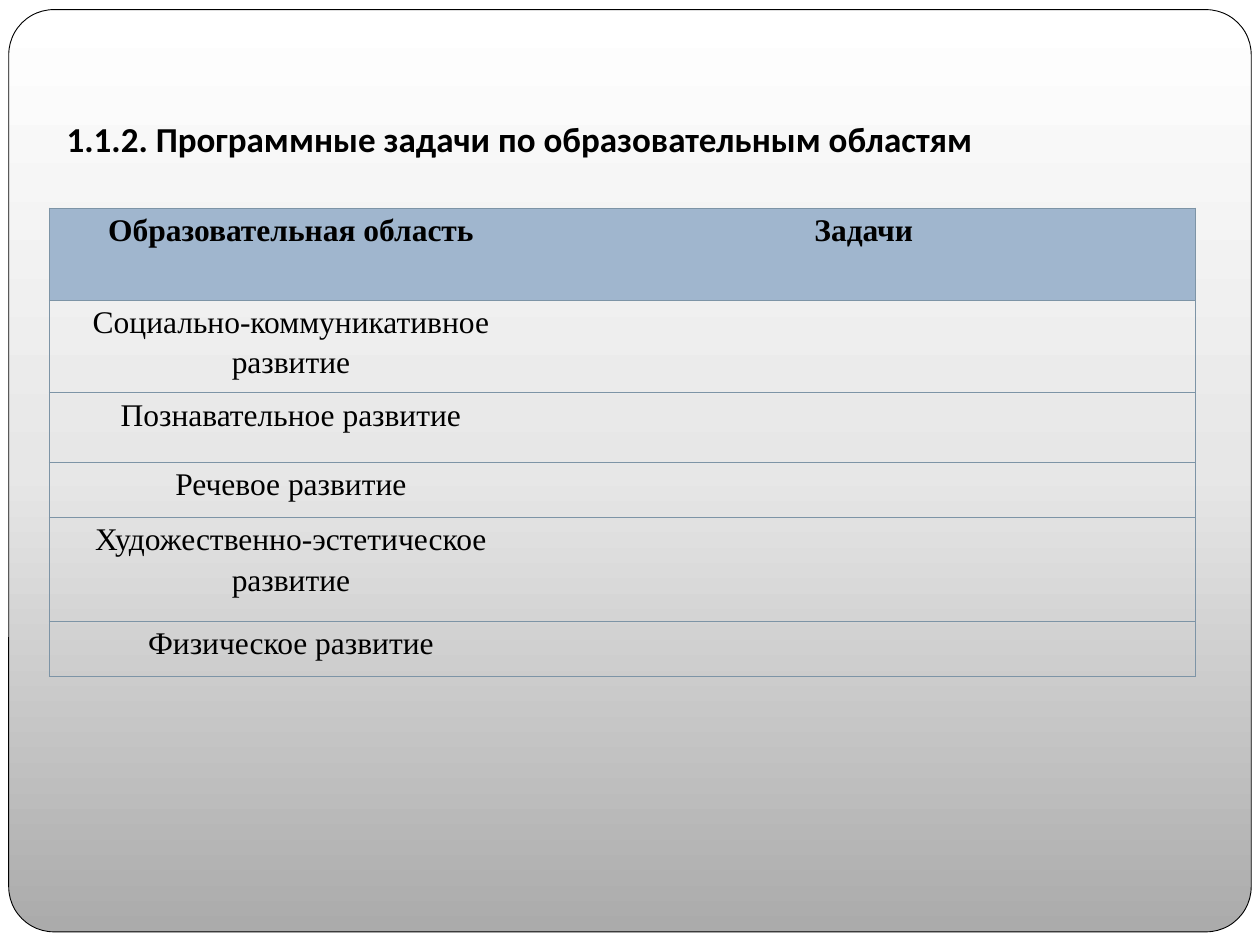
import copy
import pptx
import pptx.util
import pptx.dml.color
import pptx.enum.shapes
import pptx.enum.text
import pptx.oxml
import pptx.oxml.ns

Pt = pptx.util.Pt
RGB = pptx.dml.color.RGBColor.from_string
theme = {
    "ink": "000000", "paper": "FFFFFF", "head": "A0B6CE", "rule": "7D94A6",
    "fade": [(0, "ABABAB"), (0.5, "E7E7E7"), (1, "FFFFFF")],
    "title": 20, "body": 18, "sans": "Calibri", "serif": "Times New Roman",
}


def style(run, face, size, bold):
    run.font.name = face
    run.font.size = Pt(size)
    run.font.bold = bold
    run.font.color.rgb = RGB(theme["ink"])


def border(cell, sides):
    props = cell._tc.get_or_add_tcPr()
    for spot, side in enumerate("LRTB"):
        paint = "<a:noFill/>"
        if side in sides:
            paint = f'<a:solidFill><a:srgbClr val="{theme["rule"]}"/></a:solidFill>'
        space = pptx.oxml.ns.nsdecls("a")
        line = pptx.oxml.parse_xml(f'<a:ln{side} {space} w="{Pt(0.75)}">{paint}</a:ln{side}>')
        props.insert(spot, line)


deck = pptx.Presentation()
deck.slide_width, deck.slide_height = Pt(720), Pt(540)
slide = deck.slides.add_slide(deck.slide_layouts[6])
slide.background.fill.solid()
slide.background.fill.fore_color.rgb = RGB(theme["paper"])

panel = slide.shapes.add_shape(
    pptx.enum.shapes.MSO_SHAPE.ROUNDED_RECTANGLE, Pt(5), Pt(5.5), Pt(710), Pt(527))
panel.adjustments[0] = 0.049
panel.shadow.inherit = False
panel.line.color.rgb = RGB(theme["ink"])
panel.line.width = Pt(0.5)
panel.fill.gradient()
panel.fill.gradient_angle = 90
stops = panel.fill._fill._gradFill.gsLst
stops.append(copy.deepcopy(stops[-1]))
for stop, (place, color) in zip(panel.fill.gradient_stops, theme["fade"]):
    stop.position = place
    stop.color.rgb = RGB(color)

rows = [
    (52.7, "Образовательная область", "Задачи"),
    (52.7, "Социально-коммуникативное развитие", ""),
    (39.8, "Познавательное развитие", ""),
    (31.6, "Речевое развитие", ""),
    (59.4, "Художественно-эстетическое развитие", ""),
    (31.6, "Физическое развитие", ""),
]
high = sum(row[0] for row in rows)
table = slide.shapes.add_table(len(rows), 2, Pt(28.3), Pt(119), Pt(654.7), Pt(high)).table
table.first_row = table.horz_banding = False
table.columns[0].width, table.columns[1].width = Pt(276), Pt(378.7)
for r, (tall, *words) in enumerate(rows):
    table.rows[r].height = Pt(tall)
    for c, word in enumerate(words):
        cell = table.cell(r, c)
        cell.margin_left = cell.margin_right = Pt(5)
        cell.margin_top = cell.margin_bottom = 0
        if r == 0:
            cell.fill.solid()
            cell.fill.fore_color.rgb = RGB(theme["head"])
        else:
            cell.fill.background()
        border(cell, "LR"[c] + "TB")
        if word:
            cell.text_frame.text = word
            para = cell.text_frame.paragraphs[0]
            para.alignment = pptx.enum.text.PP_ALIGN.CENTER
            para.line_spacing = 1.15
            style(para.runs[0], theme["serif"], theme["body"], r == 0)

title = slide.shapes.add_textbox(Pt(31), Pt(63.5), Pt(536.5), Pt(53))
title.text_frame.text = "1.1.2. Программные задачи по образовательным областям"
style(title.text_frame.paragraphs[0].runs[0], theme["sans"], theme["title"], True)

deck.save("out.pptx")
